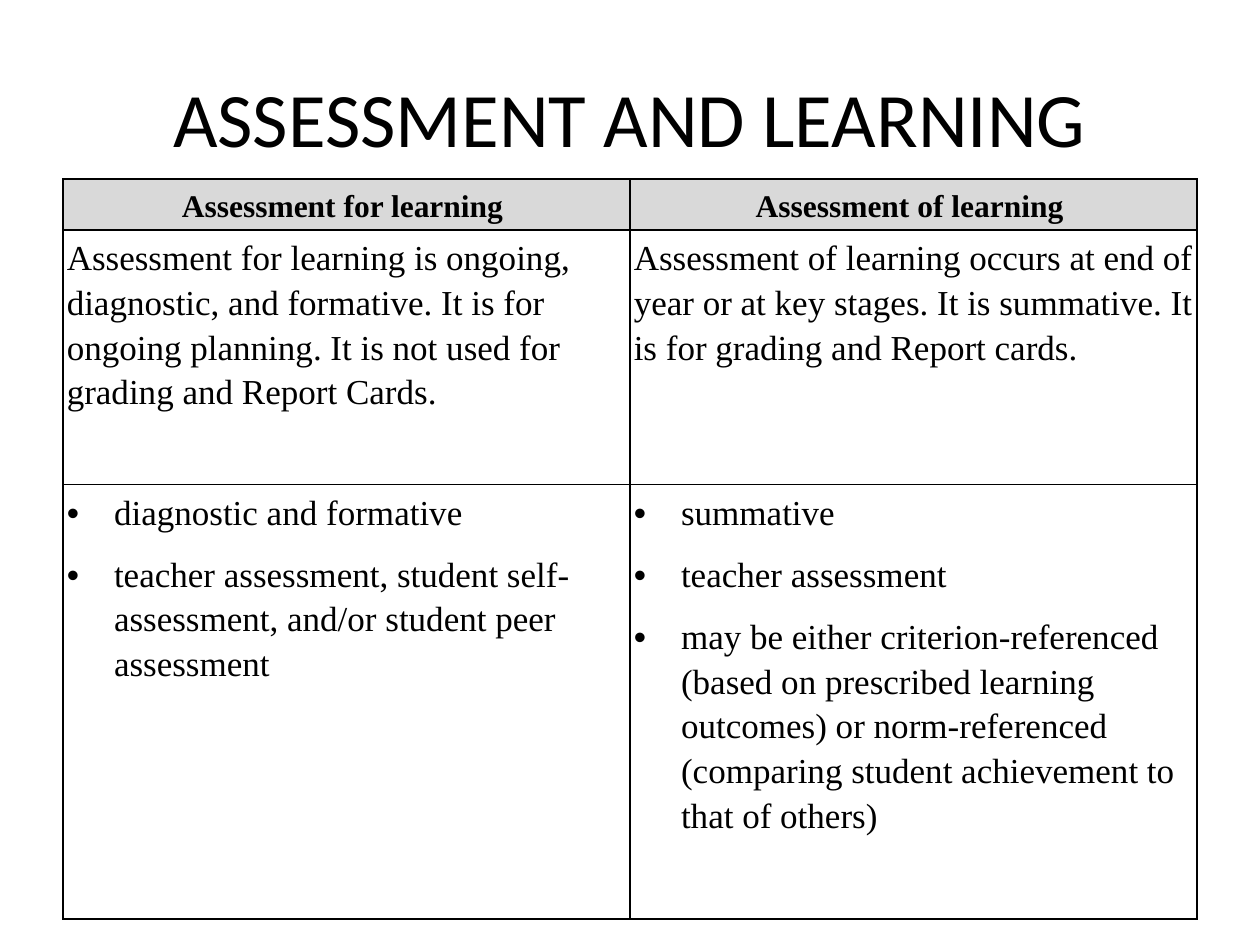
"""Build a slide comparing assessment for learning with assessment of learning."""
from lxml import etree
from pptx import Presentation
from pptx import util as u
from pptx.dml.color import RGBColor
from pptx.enum import text
from pptx.oxml import ns

Pt = u.Pt
TITLE = "ASSESSMENT AND LEARNING"
HEADERS = ["Assessment for learning ", "Assessment of learning "]
SUMMARIES = [
    "Assessment for learning is ongoing, diagnostic, and formative. It is for ongoing "
    "planning. It is not used for grading and Report Cards.",
    "Assessment of learning occurs at end of year or at key stages. It is summative. "
    "It is for grading and Report cards.",
]
FEATURES = [
    ["diagnostic and formative",
     "teacher assessment, student self-assessment, and/or student peer assessment"],
    ["summative",
     "teacher assessment",
     "may be either criterion-referenced (based on prescribed learning outcomes) or "
     "norm-referenced (comparing student achievement to that of others)"],
]
THEME = {
    "ink": "000000", "header_fill": "D9D9D9",
    "title_font": "Calibri", "body_font": "Times New Roman",
    "title": 44, "header": 18, "body": 20,
}
LEFT, WIDTH = 36, 648
TITLE_TOP, TITLE_HEIGHT = 21.6, 90
TABLE_TOP, ROW_HEIGHTS = 102.2, [26, 145.4, 248.4]
INSET, INDENT, TAB = 2.16, 27, 36


def add_xml(parent, tag, **attrs):
    return etree.SubElement(parent, ns.qn(tag), **attrs)


def write(tf, lines, size=THEME["body"], font=THEME["body_font"], bold=False,
          align=text.PP_ALIGN.LEFT, spacing=None, after=0, bullet=False):
    tf.word_wrap = True
    for i, line in enumerate(lines):
        p = tf.add_paragraph() if i else tf.paragraphs[0]
        p.alignment, p.line_spacing, p.space_after = align, spacing, Pt(after)
        r = p.add_run()
        r.text = line
        r.font.size, r.font.name, r.font.bold = Pt(size), font, bold
        r.font.color.rgb = RGBColor.from_string(THEME["ink"])
        if bullet:
            add_bullet(p)


def add_bullet(p):
    props = p._p.get_or_add_pPr()
    props.set("marL", str(Pt(INDENT)))
    props.set("indent", str(Pt(-INDENT)))
    add_xml(props, "a:buFont", typeface="Arial")
    add_xml(props, "a:buChar", char="•")
    tabs = add_xml(props, "a:tabLst")
    add_xml(tabs, "a:tab", pos=str(Pt(TAB)), algn="l")


def style_cell(cell, fill=None, anchor=text.MSO_ANCHOR.TOP):
    cell.margin_left = cell.margin_right = cell.margin_top = cell.margin_bottom = Pt(INSET)
    cell.vertical_anchor = anchor
    props = cell._tc.get_or_add_tcPr()
    for side in ("a:lnL", "a:lnR", "a:lnT", "a:lnB"):
        ln = add_xml(props, side, w=str(Pt(1)))
        add_xml(add_xml(ln, "a:solidFill"), "a:srgbClr", val=THEME["ink"])
    if fill:
        cell.fill.solid()
        cell.fill.fore_color.rgb = RGBColor.from_string(fill)
    else:
        cell.fill.background()


def add_title(slide):
    sp = slide.shapes.add_textbox(Pt(LEFT), Pt(TITLE_TOP), Pt(WIDTH), Pt(TITLE_HEIGHT))
    sp.text_frame.vertical_anchor = text.MSO_ANCHOR.MIDDLE
    write(sp.text_frame, [TITLE], size=THEME["title"], font=THEME["title_font"],
          align=text.PP_ALIGN.CENTER)


def add_comparison(slide):
    table = slide.shapes.add_table(len(ROW_HEIGHTS), len(HEADERS), Pt(LEFT), Pt(TABLE_TOP),
                                   Pt(WIDTH), Pt(sum(ROW_HEIGHTS))).table
    table.horz_banding = table.first_row = False
    for row, height in zip(table.rows, ROW_HEIGHTS):
        row.height = Pt(height)
    for col, (header, summary, features) in enumerate(zip(HEADERS, SUMMARIES, FEATURES)):
        head, middle, bottom = (table.cell(row, col) for row in range(len(ROW_HEIGHTS)))
        style_cell(head, THEME["header_fill"], text.MSO_ANCHOR.MIDDLE)
        style_cell(middle)
        style_cell(bottom)
        write(head.text_frame, [header], size=THEME["header"], bold=True,
              align=text.PP_ALIGN.CENTER, spacing=1.15)
        write(middle.text_frame, [summary], spacing=1.15)
        write(bottom.text_frame, features, spacing=1.15, after=10, bullet=True)


def main():
    prs = Presentation()
    prs.slide_width, prs.slide_height = Pt(720), Pt(540)
    slide = prs.slides.add_slide(prs.slide_layouts[6])
    add_title(slide)
    add_comparison(slide)
    prs.save("out.pptx")


if __name__ == "__main__":
    main()
